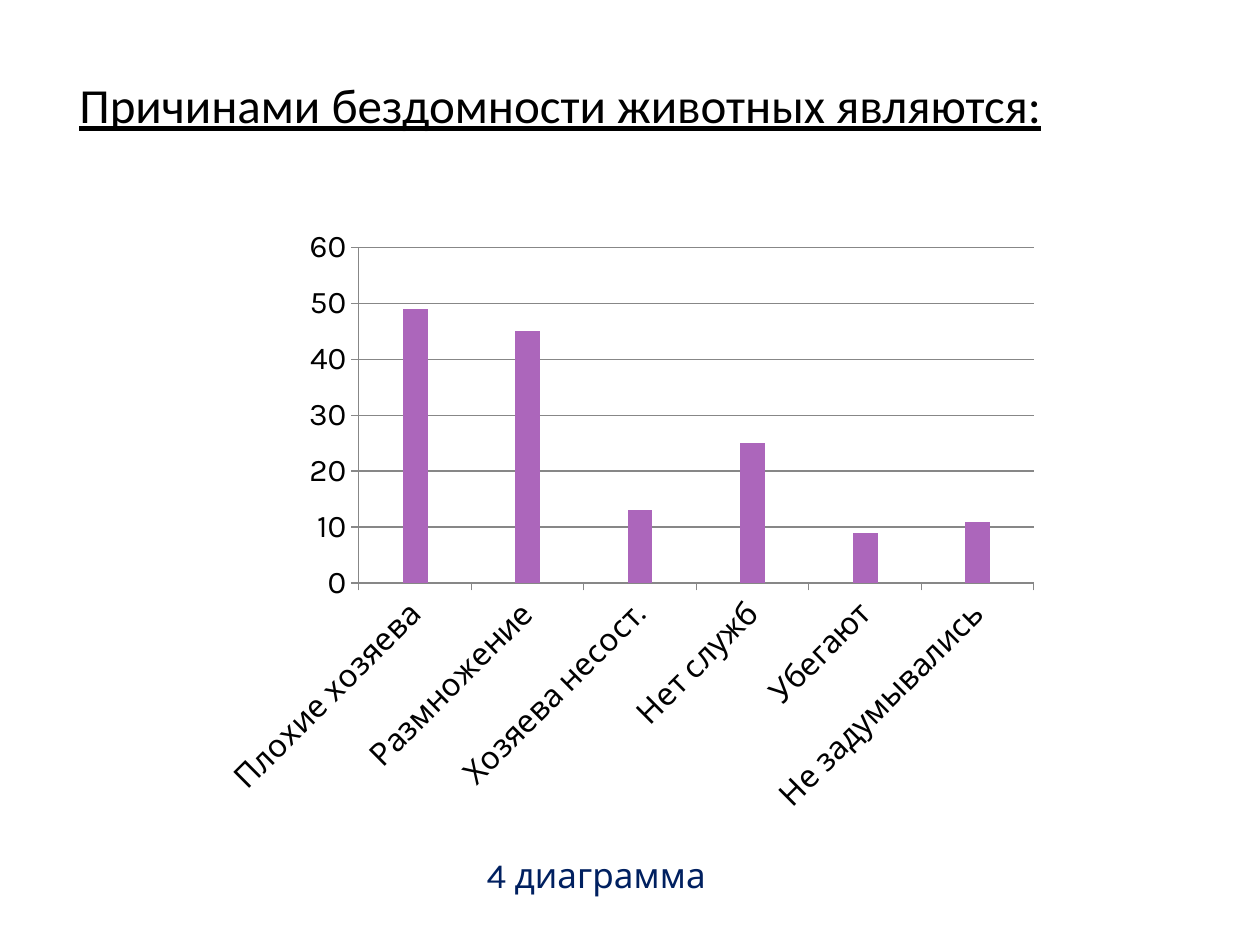
from dataclasses import dataclass

from pptx import Presentation
from pptx import util as u
from pptx.chart import data
from pptx.dml.color import RGBColor
from pptx.enum import chart as ch
from pptx.enum import text
from pptx.oxml import parse_xml
from pptx.oxml.ns import nsdecls

BLACK = RGBColor(0, 0, 0)
NAVY = RGBColor(0x00, 0x20, 0x60)
GREY = RGBColor(0x87, 0x87, 0x87)
ROSE = RGBColor(0xB8, 0x3D, 0x68)
PURPLE = RGBColor(0xAC, 0x66, 0xBB)
ORANGE = RGBColor(0xDE, 0x6C, 0x36)

CAUSES = {
    "Плохие хозяева": 49,
    "Размножение": 45,
    "Хозяева несост.": 13,
    "Нет служб": 25,
    "Убегают": 9,
    "Не задумывались": 11,
}
BLANK = [None] * len(CAUSES)


@dataclass
class Series:
    name: str
    vals: list
    color: RGBColor


@dataclass
class Label:
    words: str
    box: tuple
    font: str
    size: int
    color: RGBColor
    align: text.PP_ALIGN
    pad: float
    line: bool = False
    tab: float = 0


SERIES = [
    Series("Series 1", BLANK, ROSE),
    Series("Series 2", list(CAUSES.values()), PURPLE),
    Series("Series 3", BLANK, ORANGE),
]
LABELS = [
    Label("4 диаграмма", (6.15, 16.66, 8.33, 1.4), "Karla", 20, NAVY,
          text.PP_ALIGN.RIGHT, 0),
    Label("\tПричинами бездомности животных являются:", (0, 0, 21.46, 2.82),
          "Calibri", 28, BLACK, text.PP_ALIGN.LEFT, 0.13, True, 1.35),
]


def add_label(slide, label: Label) -> None:
    frame = slide.shapes.add_textbox(*map(u.Cm, label.box)).text_frame
    frame.word_wrap = True
    frame.vertical_anchor = text.MSO_ANCHOR.BOTTOM
    frame.margin_top = frame.margin_bottom = u.Cm(label.pad)
    frame.text = label.words
    para = frame.paragraphs[0]
    para.alignment = label.align
    if label.tab:
        para._p.get_or_add_pPr().append(parse_xml(
            f'<a:tabLst {nsdecls("a")}>'
            f'<a:tab pos="{u.Cm(label.tab)}" algn="l"/></a:tabLst>'))
    for run in para.runs:
        run.font.name = label.font
        run.font.size = u.Pt(label.size)
        run.font.color.rgb = label.color
        run.font.underline = label.line


def style_axis(axis) -> None:
    axis.major_tick_mark = ch.XL_TICK_MARK.OUTSIDE
    axis.minor_tick_mark = ch.XL_TICK_MARK.NONE
    axis.format.line.color.rgb = GREY
    axis.format.line.width = u.Pt(0.75)


def add_bars(slide) -> None:
    table = data.CategoryChartData()
    table.categories = list(CAUSES)
    for item in SERIES:
        table.add_series(item.name, item.vals)
    box = map(u.Cm, (4.24, 4.37, 16.94, 12.29))
    chart = slide.shapes.add_chart(
        ch.XL_CHART_TYPE.COLUMN_CLUSTERED, *box, table).chart
    chart.has_legend = False
    chart.has_title = False
    chart.font.name = "Karla"
    chart.font.size = u.Pt(18)
    chart.font.color.rgb = BLACK

    plot = chart.plots[0]
    plot.gap_width = 150
    plot.overlap = 0
    plot.vary_by_categories = False
    for bars, item in zip(plot.series, SERIES):
        bars.format.fill.solid()
        bars.format.fill.fore_color.rgb = item.color

    cat, val = chart.category_axis, chart.value_axis
    style_axis(cat)
    style_axis(val)
    cat.tick_labels.font.size = u.Pt(18)
    cat._element.txPr.bodyPr.set("rot", "-2700000")
    val.minimum_scale, val.maximum_scale, val.major_unit = 0, 60, 10
    val.has_major_gridlines = True
    grid = val.major_gridlines.format.line
    grid.color.rgb = GREY
    grid.width = u.Pt(0.75)


def main() -> None:
    deck = Presentation()
    deck.slide_width, deck.slide_height = u.Cm(25.4), u.Cm(19.05)
    slide = deck.slides.add_slide(deck.slide_layouts[6])
    add_bars(slide)
    for label in LABELS:
        add_label(slide, label)
    deck.save("out.pptx")


if __name__ == "__main__":
    main()
